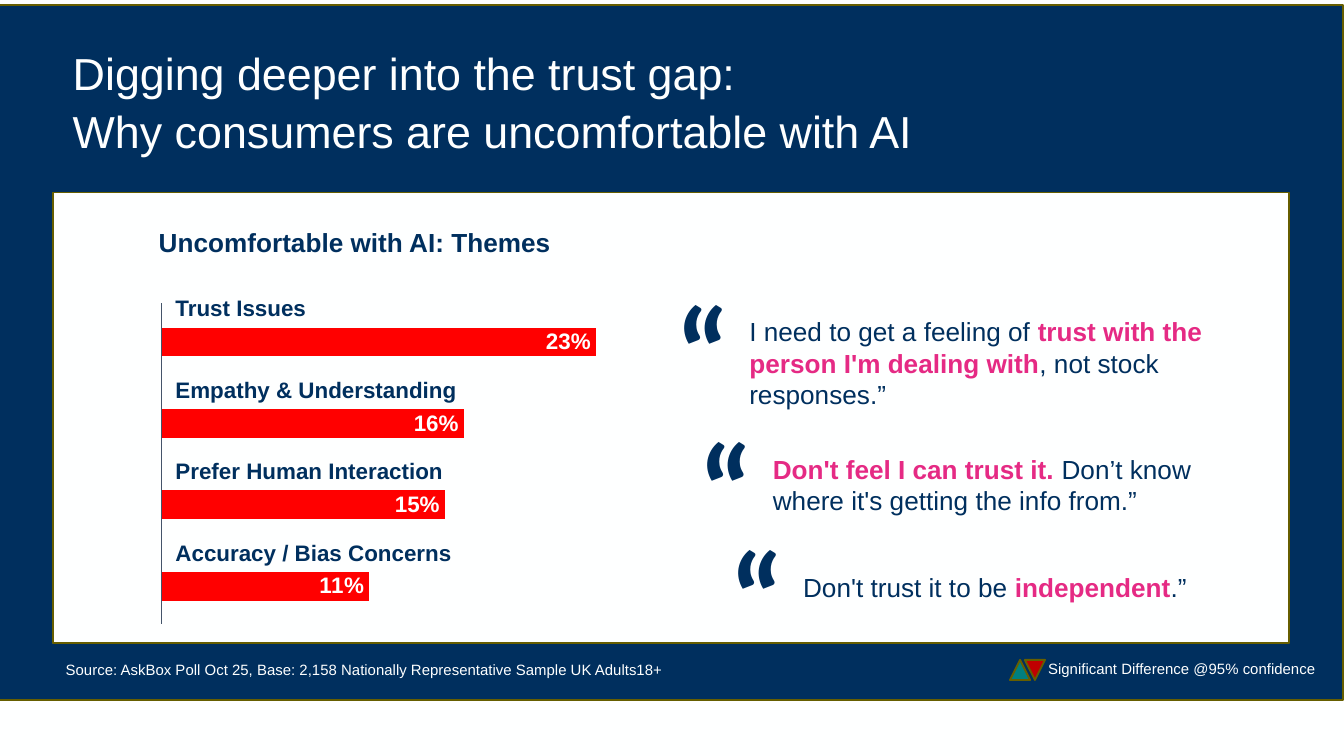
from dataclasses import dataclass

from lxml import etree
from pptx import Presentation
from pptx.chart import data as chart_data
from pptx.dml.color import RGBColor
from pptx.enum import chart as charts, shapes, text
from pptx.oxml import parse_xml
from pptx.oxml.ns import nsdecls, qn
from pptx import util as u

WIDTH = u.Inches(10)
HEIGHT = WIDTH * 9 // 16
COLUMNS = 100
CELL = WIDTH / COLUMNS
NAVY, WHITE, PINK, RED = "002F5E", "FEFFFF", "E52A84", "FF0000"
OLIVE, SLATE, TEAL, CRIMSON = "665E00", "44546A", "007F7F", "C00000"


@dataclass
class Area:
    column: float
    row: float
    columns: float
    rows: float

    def lengths(self) -> list[int]:
        return [cells(n) for n in (self.column, self.row, self.columns, self.rows)]


@dataclass
class Block:
    area: Area
    fill: str
    preset: int = shapes.MSO_SHAPE.RECTANGLE
    rotation: int = 0


@dataclass
class Wording:
    area: Area
    content: str
    size: int
    color: str = NAVY
    bold: bool = False
    emphasis: str = ""
    font: str = "Arial"
    inset: bool = True


@dataclass
class Quote:
    column: float
    row: float
    drop: float
    rows: float
    content: str
    emphasis: str


@dataclass
class Theme:
    name: str
    share: float


def cells(count: float) -> int:
    return round(count * CELL)


def color(hex_code: str) -> RGBColor:
    return RGBColor.from_string(hex_code)


def style(font, size: int, hex_code: str, bold: bool = False, name: str = "Arial") -> None:
    font.name, font.size, font.bold = name, u.Pt(size), bold
    font.color.rgb = color(hex_code)


def draw_block(slide, block: Block) -> None:
    panel = slide.shapes.add_shape(block.preset, *block.area.lengths())
    panel.shadow.inherit = False
    panel.rotation = block.rotation
    panel.fill.solid()
    panel.fill.fore_color.rgb = color(block.fill)
    panel.line.color.rgb = color(OLIVE)
    panel.line.width = u.Pt(1)


def draw_wording(slide, wording: Wording):
    frame = slide.shapes.add_textbox(*wording.area.lengths()).text_frame
    frame.word_wrap = True
    if not wording.inset:
        frame.margin_left = frame.margin_right = frame.margin_top = frame.margin_bottom = 0
    parts = wording.content.partition(wording.emphasis) if wording.emphasis else (wording.content,)
    paragraph = frame.paragraphs[0]
    paragraph.text = parts[0]
    for part in filter(None, parts[1:]):
        paragraph.add_run().text = part
    for run in paragraph.runs:
        stressed = run.text == wording.emphasis
        style(run.font, wording.size, PINK if stressed else wording.color,
              stressed or wording.bold, wording.font)
    return frame


def draw_quote(slide, quote: Quote) -> None:
    draw_wording(slide, Wording(Area(quote.column, quote.row, 7.1, 11.1), "“", 66,
                                bold=True, font="Lato", inset=False))
    draw_wording(slide, Wording(Area(quote.column + 5.2, quote.row + quote.drop, 33.9, quote.rows),
                                quote.content, 14, emphasis=quote.emphasis, inset=False))


def draw_theme_bars(slide, themes: list[Theme]) -> None:
    figures = chart_data.CategoryChartData(number_format="0%")
    figures.categories = [str(n) for n in range(1, len(themes) + 1)]
    figures.add_series("Series 1", [theme.share for theme in themes])
    bars = slide.shapes.add_chart(charts.XL_CHART_TYPE.BAR_CLUSTERED,
                                  *Area(10.5, 15.63, 45, 32.5).lengths(), figures).chart
    bars.has_legend = bars.has_title = False
    style(bars.font, 12, NAVY)
    bars.category_axis.reverse_order = True
    bars.category_axis.visible = bars.value_axis.visible = False
    bars.value_axis.has_major_gridlines = False
    bars.value_axis.minimum_scale, bars.value_axis.maximum_scale = 0, 0.25

    plot = bars.plots[0]
    plot.gap_width = 182
    plot.vary_by_categories = False
    series = plot.series[0]
    series.format.fill.solid()
    series.format.fill.fore_color.rgb = color(RED)
    labels = series.data_labels
    labels.show_value = True
    labels.position = charts.XL_LABEL_POSITION.INSIDE_END
    labels.number_format, labels.number_format_is_linked = "0%", False
    style(labels.font, 12, WHITE, True)

    plot_area = bars.element.find(".//" + qn("c:plotArea"))
    for automatic in plot_area.findall(qn("c:layout")):
        plot_area.remove(automatic)
    shares = "".join(f'<c:{key} val="{value}"/>' for key, value in
                     {"layoutTarget": "inner", "xMode": "edge", "yMode": "edge",
                      "x": 0.034, "y": 0.209, "w": 0.781, "h": 0.746}.items())
    plot_area.insert(0, parse_xml(
        f'<c:layout {nsdecls("c")}><c:manualLayout>{shares}</c:manualLayout></c:layout>'))


def draw_baseline(slide, column: float, top: float, bottom: float) -> None:
    baseline = slide.shapes.add_connector(shapes.MSO_CONNECTOR.STRAIGHT, cells(column),
                                          cells(top), cells(column), cells(bottom))
    baseline.line.color.rgb = color(SLATE)
    baseline.line.width = u.Pt(0.5)
    etree.SubElement(baseline._element.spPr, qn("a:effectLst"))


def main() -> None:
    deck = Presentation()
    deck.slide_width, deck.slide_height = WIDTH, HEIGHT
    slide = deck.slides.add_slide(deck.slide_layouts[6])
    slide.background.fill.solid()
    slide.background.fill.fore_color.rgb = color(WHITE)

    triangle = shapes.MSO_SHAPE.ISOSCELES_TRIANGLE
    for block in (
        Block(Area(-0.05, 0.4, 100, 51.7), NAVY),
        Block(Area(3.92, 14.33, 92, 33.55), WHITE),
        Block(Area(75.15, 49.1, 1.5, 1.5), TEAL, triangle),
        Block(Area(76.25, 49.1, 1.5, 1.5), CRIMSON, triangle, 180),
    ):
        draw_block(slide, block)

    title = draw_wording(slide, Wording(
        Area(4.43, 1.6, 81.4, 11.6),
        "Digging deeper into the trust gap: \vWhy consumers are uncomfortable with AI", 24, WHITE))
    title.vertical_anchor = text.MSO_ANCHOR.MIDDLE
    title.paragraphs[0].line_spacing = u.Pt(31)

    for wording in (
        Wording(Area(3.9, 48.7, 51.9, 2.4), "Source: AskBox Poll Oct 25, Base: 2,158 Nationally "
                "Representative Sample UK Adults18+", 8, WHITE),
        Wording(Area(77, 48.6, 22.5, 2.4), "Significant Difference @95% confidence", 8, WHITE),
        Wording(Area(10.83, 16.35, 43.6, 3.4), "Uncomfortable with AI: Themes", 14, bold=True),
    ):
        draw_wording(slide, wording)

    themes = [Theme("Trust Issues", 0.23), Theme("Empathy & Understanding", 0.16),
              Theme("Prefer Human Interaction", 0.15), Theme("Accuracy / Bias Concerns", 0.11)]
    draw_theme_bars(slide, themes)
    draw_baseline(slide, 12, 22.57, 46.4)
    for position, theme in enumerate(themes):
        draw_wording(slide, Wording(Area(12.07, 21.42 + 6.06 * position, 28.1, 2.9),
                                    theme.name, 12, bold=True))

    for quote in (
        Quote(50.55, 20.7, 2.8, 7.1, "I need to get a feeling of trust with the person I'm dealing "
              "with, not stock responses.”", "trust with the person I'm dealing with"),
        Quote(52.3, 30.9, 2.8, 4.7, "Don't feel I can trust it. Don’t know where it's getting "
              "the info from.”", "Don't feel I can trust it. "),
        Quote(54.55, 38.93, 3.57, 2.4, "Don't trust it to be independent.”", "independent"),
    ):
        draw_quote(slide, quote)

    deck.save("out.pptx")


if __name__ == "__main__":
    main()
